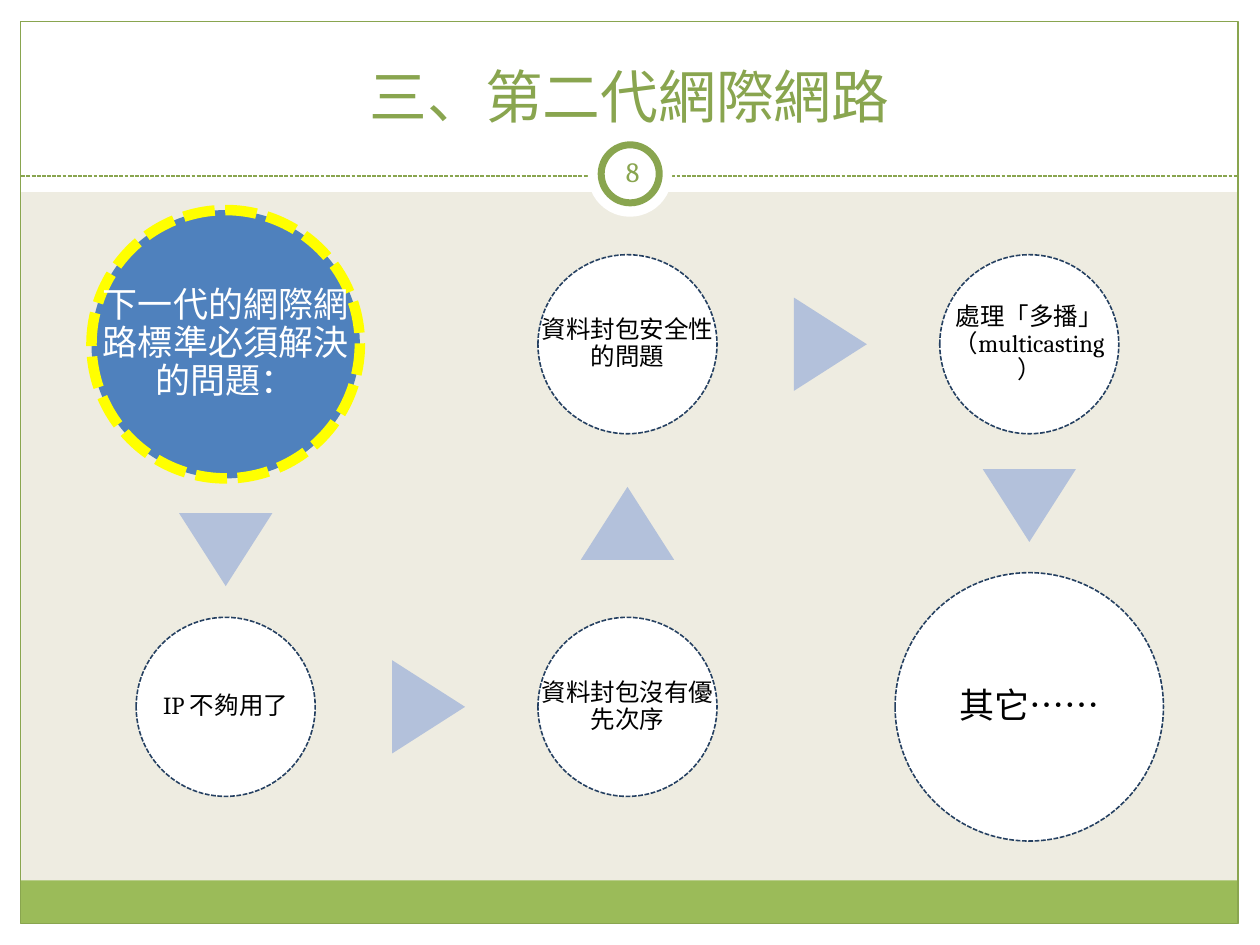
from lxml.etree import SubElement
from pptx import Presentation
from pptx.dml.color import RGBColor
from pptx.enum.dml import MSO_LINE_DASH_STYLE as Dash
from pptx.enum.shapes import MSO_CONNECTOR as Connector, MSO_SHAPE as Shape
from pptx.enum.text import MSO_ANCHOR as Anchor, PP_ALIGN as Align
from pptx.oxml.ns import qn
from pptx.util import Cm, Pt

color = RGBColor.from_string
WHITE, GREEN, DARK_GREEN = "FFFFFF", "9BBB59", "89A54F"
BLUE, NAVY, PALE_BLUE, YELLOW = "4F81BD", "254061", "B3C1DB", "FFFF00"

presentation = Presentation()
presentation.slide_width, presentation.slide_height = Cm(25.4), Cm(19.05)
slide = presentation.slides.add_slide(presentation.slide_layouts[6])
slide.background.fill.solid()
slide.background.fill.fore_color.rgb = color("EEECE1")


def add_shape(kind, box, fill=None, line=None, width=0.75, dash=None, rotation=0):
    shape = slide.shapes.add_shape(kind, *map(Cm, box))
    shape.shadow.inherit = False
    shape.rotation = rotation
    for part, value in ((shape.fill, fill), (shape.line.fill, line)):
        if value:
            part.solid()
            part.fore_color.rgb = color(value)
        else:
            part.background()
    if line:
        shape.line.width = Pt(width)
        shape.line.dash_style = dash


def add_text(text, box, size, text_color, font="Cambria", inset=0.06,
             anchor=Anchor.MIDDLE, spacing=1.0):
    frame = slide.shapes.add_textbox(*map(Cm, box)).text_frame
    frame_format = {"word_wrap": True, "vertical_anchor": anchor}
    for side in ("left", "top", "right", "bottom"):
        frame_format[f"margin_{side}"] = Cm(inset)
    paragraph = frame.paragraphs[0]
    run = paragraph.add_run()
    run.text = text
    formats = (
        (frame, frame_format),
        (paragraph, {"alignment": Align.CENTER, "line_spacing": spacing}),
        (run.font, {"name": font, "size": Pt(size)}),
        (run.font.color, {"rgb": color(text_color)}),
    )
    for target, values in formats:
        for name, value in values.items():
            setattr(target, name, value)


# White margins, green footer band and thin frame
for box in ((0, 18.62, 25.4, 0.43), (0, 0, 25.4, 3.87),
            (0, 0, 0.43, 19.05), (24.97, 0, 0.43, 19.05)):
    add_shape(Shape.RECTANGLE, box, WHITE)
add_shape(Shape.RECTANGLE, (0.42, 17.75, 24.54, 0.87), GREEN)
add_shape(Shape.RECTANGLE, (0.42, 0.43, 24.54, 18.19), line=DARK_GREEN)

# Dashed divider under the title
divider = slide.shapes.add_connector(
    Connector.STRAIGHT, Cm(0.43), Cm(3.55), Cm(24.97), Cm(3.55))
divider.line.color.rgb = color(DARK_GREEN)
divider.line.width = Pt(0.75)
divider.line.dash_style = Dash.SQUARE_DOT
SubElement(divider.element.spPr, qn("a:effectLst"))

# Page number badge and title
add_shape(Shape.OVAL, (11.85, 2.67, 1.7, 1.7), WHITE)
add_shape(Shape.OVAL, (12.12, 2.92, 1.17, 1.17), WHITE, DARK_GREEN, 4)
add_text("三、第二代網際網路", (0.84, 0.64, 23.7, 2.11), 33, DARK_GREEN,
         font="Arial", inset=0.13, anchor=Anchor.BOTTOM)
add_text("8", (12.12, 2.84, 1.27, 1.22), 16, DARK_GREEN, inset=0.13)

# Circles on a grid of three columns and two rows
COLUMNS = (4.55, 12.65, 20.75)
TOP, BOTTOM = 6.94, 14.25
LARGE, SMALL = (5.41, 20), (3.61, 14)
plain = {"fill": WHITE, "line": NAVY, "width": 0.9, "dash": Dash.SQUARE_DOT}
highlight = {**plain, "fill": BLUE, "line": YELLOW, "width": 6}
circles = (
    ("下一代的網際網路標準必須解決的問題：", 0, TOP, LARGE, highlight, WHITE),
    ("IP 不夠用了", 0, BOTTOM, SMALL, plain, "000000"),
    ("資料封包沒有優先次序", 1, BOTTOM, SMALL, plain, "000000"),
    ("資料封包安全性的問題", 1, TOP, SMALL, plain, "000000"),
    ("處理「多播」（multicasting）", 2, TOP, SMALL, plain, "000000"),
    ("其它……", 2, BOTTOM, LARGE, plain, "000000"),
)
for text, column, middle, (diameter, size), style, text_color in circles:
    box = (COLUMNS[column] - diameter / 2, middle - diameter / 2, diameter, diameter)
    add_shape(Shape.OVAL, box, **style)
    add_text(text, box, size, text_color, spacing=0.9)

# Triangles pointing from each circle to the next
BASE, HEIGHT = 1.88, 1.47
UP, RIGHT, DOWN = 0, 90, 180
for center, middle, rotation in (
        (COLUMNS[0], 11.08, DOWN), (8.64, BOTTOM, RIGHT), (COLUMNS[1], 10.55, UP),
        (16.74, TOP, RIGHT), (COLUMNS[2], 10.19, DOWN)):
    add_shape(Shape.ISOSCELES_TRIANGLE,
              (center - BASE / 2, middle - HEIGHT / 2, BASE, HEIGHT),
              PALE_BLUE, rotation=rotation)

presentation.save("out.pptx")
